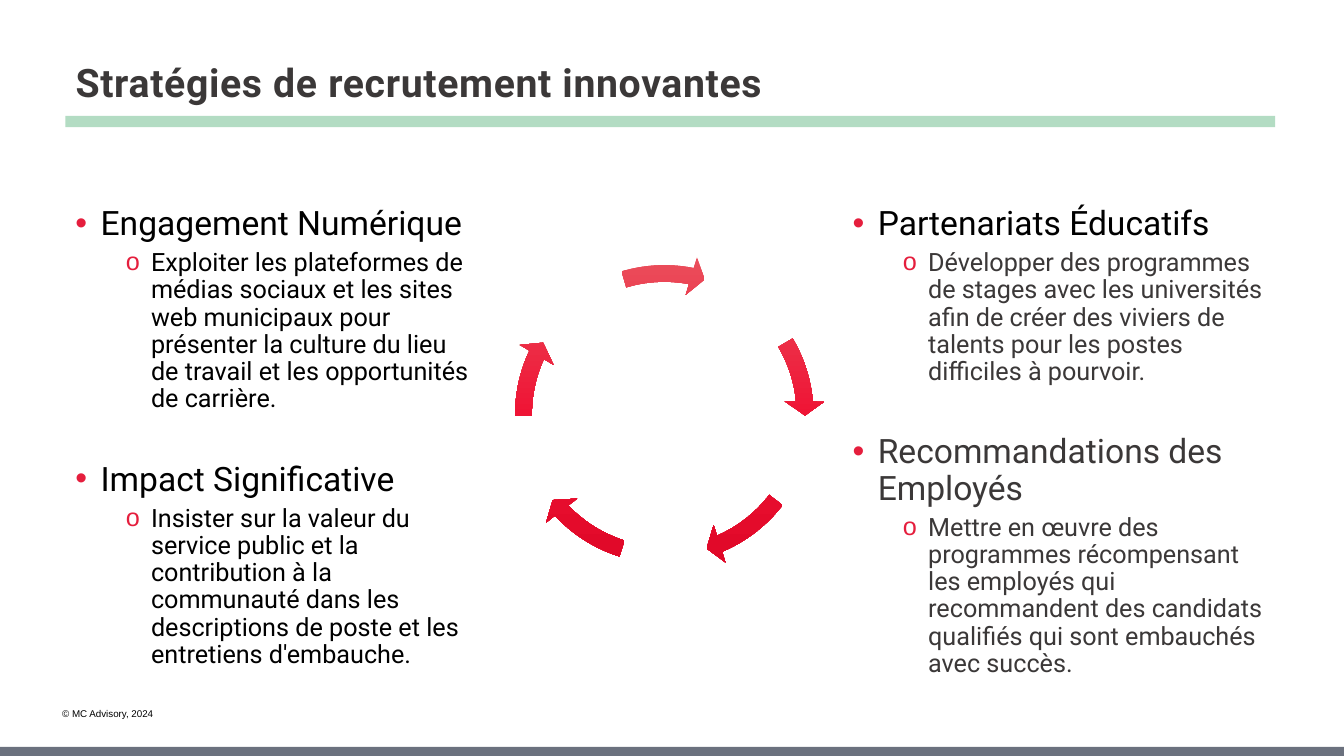
from copy import deepcopy
from dataclasses import dataclass

from lxml.etree import SubElement
from pptx import Presentation
from pptx.dml.color import RGBColor
from pptx.enum.shapes import MSO_SHAPE
from pptx.enum.text import MSO_ANCHOR, PP_ALIGN
from pptx.oxml.ns import qn
from pptx.util import Pt


@dataclass(frozen=True)
class Theme:
    font: str = "Roboto"
    small_font: str = "Arial"
    black: str = "000000"
    charcoal: str = "3B3838"
    bullet: str = "E51E3D"
    rule: str = "B3DCC3"
    footer: str = "6B717E"
    arrow: tuple = ("EA4F5C", "EF1435", "DF0727")
    title_size: int = 28
    heading_size: int = 24
    detail_size: int = 18
    copyright_size: int = 7


THEME = Theme()

# Each entry: heading, heading colour, detail, detail colour
LEFT_STRATEGIES = [
    ("Engagement Numérique", THEME.black,
     "Exploiter les plateformes de médias sociaux et les sites web municipaux "
     "pour présenter la culture du lieu de travail et les opportunités de carrière.",
     THEME.black),
    ("Impact Significative", THEME.black,
     "Insister sur la valeur du service public et la contribution à la communauté "
     "dans les descriptions de poste et les entretiens d'embauche.",
     THEME.black),
]
RIGHT_STRATEGIES = [
    ("Partenariats Éducatifs", THEME.black,
     "Développer des programmes de stages avec les universités afin de créer "
     "des viviers de talents pour les postes difficiles à pourvoir.",
     THEME.charcoal),
    ("Recommandations des Employés", THEME.charcoal,
     "Mettre en œuvre des programmes récompensant les employés qui recommandent "
     "des candidats qualifiés qui sont embauchés avec succès.",
     THEME.charcoal),
]

# End and start of each arrow in the cycle, as shape adjustments
ARROW_ARCS = [
    (212.925, 197.669),
    (40.139, 22.542),
    (82.097, 64.5),
    (122.97, 107.714),
    (168.649, 151.99),
]


def style_font(font, name, size, color, bold=False):
    font.name = name
    font.size = Pt(size)
    font.bold = bold
    font.color.rgb = RGBColor.from_string(color)


def add_bar(page, left, top, width, height, color):
    bar = page.shapes.add_shape(
        MSO_SHAPE.RECTANGLE, Pt(left), Pt(top), Pt(width), Pt(height))
    bar.shadow.inherit = False
    bar.fill.solid()
    bar.fill.fore_color.rgb = RGBColor.from_string(color)
    bar.line.fill.background()


def set_title(page, text):
    title = page.shapes.title
    title.left, title.top, title.width, title.height = Pt(46.8), Pt(40.3), Pt(864), Pt(41)
    frame = title.text_frame
    frame.text = text
    frame.vertical_anchor = MSO_ANCHOR.MIDDLE
    para = frame.paragraphs[0]
    para.alignment = PP_ALIGN.LEFT
    para.line_spacing = 0.9
    span = para.runs[0]
    style_font(span.font, THEME.font, THEME.title_size, THEME.charcoal, bold=True)
    span.font._element.set("spc", "50")


def add_copyright(page, text):
    box = page.shapes.add_textbox(Pt(37.4), Pt(501.8), Pt(81.4), Pt(15.8))
    box.text_frame.word_wrap = False
    box.text_frame.text = text
    span = box.text_frame.paragraphs[0].runs[0]
    style_font(span.font, THEME.small_font, THEME.copyright_size, THEME.black)


def set_bullet(para, mark, indent):
    properties = para._p.get_or_add_pPr()
    properties.set("marL", str(Pt(indent)))
    properties.set("indent", str(Pt(-18)))
    color = SubElement(properties, qn("a:buClr"))
    SubElement(color, qn("a:srgbClr"), val=THEME.bullet)
    SubElement(properties, qn("a:buFont"), typeface=THEME.small_font)
    SubElement(properties, qn("a:buChar"), char=mark)


def write_item(para, text, mark, indent, size, color, space_before):
    para.text = text
    set_bullet(para, mark, indent)
    para.line_spacing = 0.9
    para.space_before = Pt(space_before)
    style_font(para.runs[0].font, THEME.font, size, color)


def add_strategies(page, left, width, strategies):
    box = page.shapes.add_textbox(Pt(left), Pt(144), Pt(width), Pt(321))
    frame = box.text_frame
    frame.word_wrap = True
    for index, (heading, heading_color, detail, detail_color) in enumerate(strategies):
        para = frame.add_paragraph() if index else frame.paragraphs[0]
        write_item(para, heading, "•", 18, THEME.heading_size, heading_color,
                   35 if index else 0)
        write_item(frame.add_paragraph(), detail, "o", 54, THEME.detail_size,
                   detail_color, 5)


def add_cycle_arrow(page, end, start):
    arrow = page.shapes.add_shape(
        MSO_SHAPE.CIRCULAR_ARROW, Pt(360), Pt(181.4), Pt(229), Pt(229))
    for index, value in enumerate((0.052, 3.361, end, start, 0.061)):
        arrow.adjustments[index] = value
    arrow.shadow.inherit = False
    arrow.line.fill.background()
    # Three-stop gradient running from top to bottom
    arrow.fill.gradient()
    arrow.fill.gradient_angle = 270
    first_stop = arrow.fill.gradient_stops[0]._gs
    first_stop.addnext(deepcopy(first_stop))
    for stop, position, color in zip(arrow.fill.gradient_stops, (0, 0.5, 1), THEME.arrow):
        stop.position = position
        stop.color.rgb = RGBColor.from_string(color)


def main():
    deck = Presentation()
    deck.slide_width, deck.slide_height = Pt(960), Pt(540)
    page = deck.slides.add_slide(deck.slide_layouts[5])

    # Frame of the page
    add_bar(page, 0, 533.5, 960, 6.5, THEME.footer)
    add_copyright(page, "© MC Advisory, 2024")
    add_bar(page, 46.8, 82.8, 864, 8, THEME.rule)
    set_title(page, "Stratégies de recrutement innovantes")

    # Strategies on both sides of the cycle
    add_strategies(page, 46.8, 300, LEFT_STRATEGIES)
    add_strategies(page, 601.9, 309, RIGHT_STRATEGIES)
    for end, start in ARROW_ARCS:
        add_cycle_arrow(page, end, start)

    deck.save("out.pptx")


if __name__ == "__main__":
    main()
